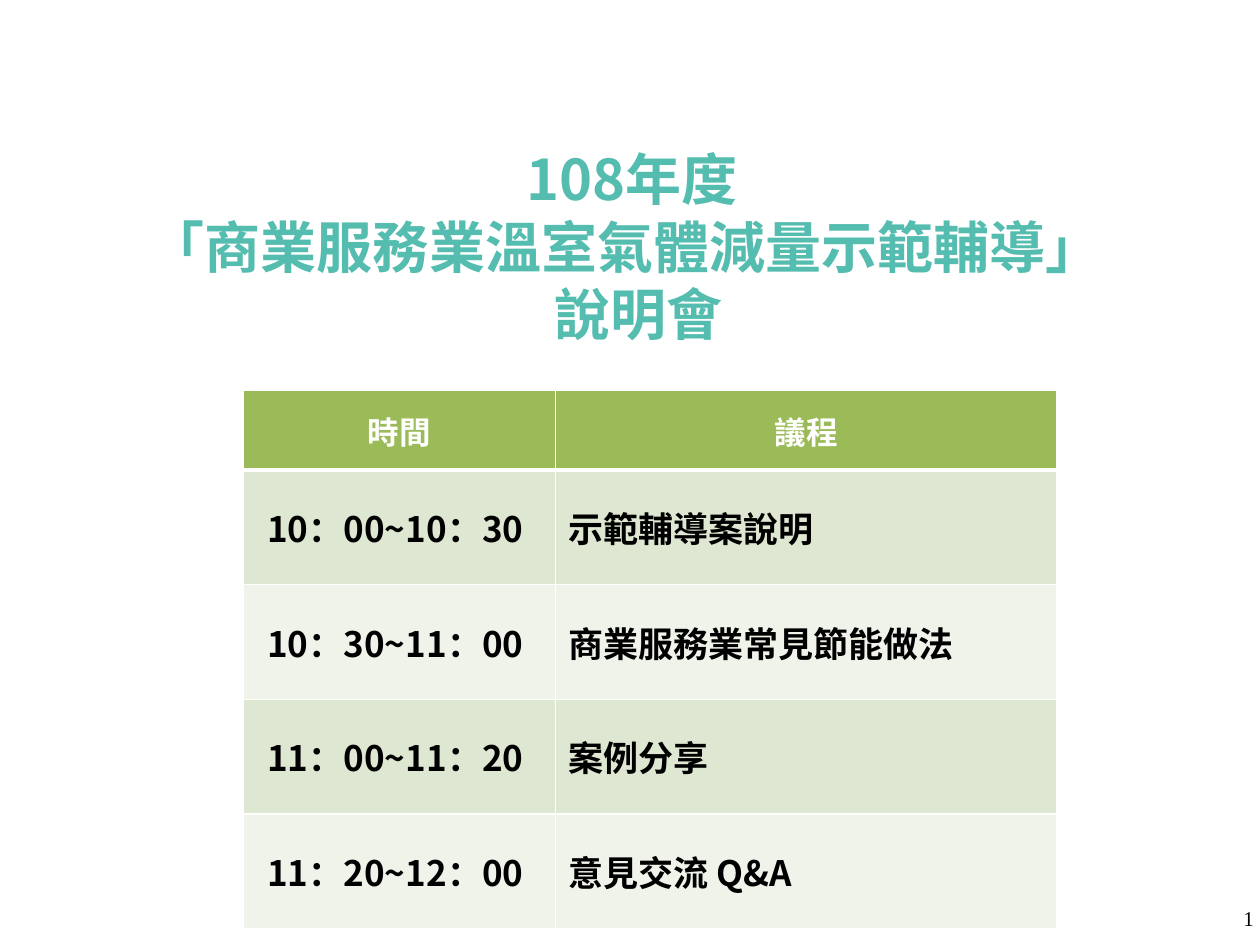
from dataclasses import dataclass

from lxml import etree
from pptx import Presentation
from pptx import util as u
from pptx.dml.color import RGBColor
from pptx.enum import text
from pptx.oxml.ns import qn

TITLE = ["108年度", "「商業服務業溫室氣體減量示範輔導」 ", " 說明會"]
AGENDA = [
    ("時間", "議程"),
    ("10：00~10：30 ", "示範輔導案說明"),
    ("10：30~11：00 ", "商業服務業常見節能做法"),
    ("11：00~11：20 ", "案例分享"),
    ("11：20~12：00 ", "意見交流 Q&A"),
]
PAGE_NUMBER = "1"

# Left, top, width, height in inches
TITLE_BOX = (0.84, 1.09, 8.35, 1.72)
NUMBER_BOX = (7.72, 7.14, 2.33, 0.4)
TABLE_AT = (1.93, 3.1)
COLUMNS = (2.48, 3.98)
HEADER_HEIGHT, ROW_HEIGHT = 0.63, 0.91


@dataclass(frozen=True)
class Theme:
    sans: str = "Noto Sans CJK SC"
    serif: str = "Times New Roman"
    teal: str = "54BDAF"
    green: str = "9BBB59"
    bands: tuple = ("DEE7D1", "EFF3EA")
    white: str = "FFFFFF"
    black: str = "000000"
    title_size: int = 32
    header_size: int = 18
    body_size: int = 20
    number_size: int = 12


THEME = Theme()
CENTER, LEFT, RIGHT = (text.PP_ALIGN.CENTER, text.PP_ALIGN.LEFT,
                       text.PP_ALIGN.RIGHT)


def inches(values):
    return [u.Inches(v) for v in values]


def fill(target, color):
    target.fill.solid()
    target.fill.fore_color.rgb = RGBColor.from_string(color)


def write(p, content, size, color, align, face=THEME.sans, bold=True):
    p.alignment = align
    r = p.add_run()
    r.text = content
    for name, value in {"name": face, "size": u.Pt(size), "bold": bold}.items():
        setattr(r.font, name, value)
    r.font.color.rgb = RGBColor.from_string(color)
    etree.SubElement(r._r.get_or_add_rPr(), qn("a:ea"), typeface=face)


def add_borders(cell, bottom):
    """Draw white cell borders; the fill must be set afterwards."""
    tc_pr = cell._tc.get_or_add_tcPr()
    for side, width in {"L": 1, "R": 1, "T": 1, "B": bottom}.items():
        ln = etree.SubElement(tc_pr, qn(f"a:ln{side}"), w=str(u.Pt(width)))
        solid = etree.SubElement(ln, qn("a:solidFill"))
        etree.SubElement(solid, qn("a:srgbClr"), val=THEME.white)


def add_title(s):
    title = s.shapes.title
    title.left, title.top, title.width, title.height = inches(TITLE_BOX)
    fill(title, THEME.white)
    tf = title.text_frame
    tf.word_wrap = True
    tf.auto_size = text.MSO_AUTO_SIZE.NONE
    tf.vertical_anchor = text.MSO_ANCHOR.MIDDLE
    for i, line in enumerate(TITLE):
        p = tf.add_paragraph() if i else tf.paragraphs[0]
        p.line_spacing = 1.0
        p.space_before = u.Pt(0)
        write(p, line, THEME.title_size, THEME.teal, CENTER)


def add_agenda(s):
    heights = [HEADER_HEIGHT] + [ROW_HEIGHT] * (len(AGENDA) - 1)
    size = (sum(COLUMNS), sum(heights))
    table = s.shapes.add_table(len(AGENDA), len(COLUMNS),
                               *inches(TABLE_AT + size)).table
    for column, width in zip(table.columns, COLUMNS):
        column.width = u.Inches(width)
    for i, (row, height) in enumerate(zip(table.rows, heights)):
        row.height = u.Inches(height)
        header = i == 0
        for j, cell in enumerate(row.cells):
            add_borders(cell, bottom=3 if header else 1)
            fill(cell, THEME.green if header else THEME.bands[(i - 1) % 2])
            cell.vertical_anchor = text.MSO_ANCHOR.MIDDLE
            write(cell.text_frame.paragraphs[0], AGENDA[i][j],
                  THEME.header_size if header else THEME.body_size,
                  THEME.white if header else THEME.black,
                  CENTER if header or j == 0 else LEFT)


def add_page_number(s):
    tf = s.shapes.add_textbox(*inches(NUMBER_BOX)).text_frame
    tf.word_wrap = True
    write(tf.paragraphs[0], PAGE_NUMBER, THEME.number_size, THEME.black,
          RIGHT, THEME.serif, bold=False)


def main():
    prs = Presentation()
    prs.slide_width, prs.slide_height = inches((10, 7.5))
    s = prs.slides.add_slide(prs.slide_layouts.get_by_name("Title Only"))
    add_page_number(s)
    add_agenda(s)
    add_title(s)
    prs.save("out.pptx")


if __name__ == "__main__":
    main()
